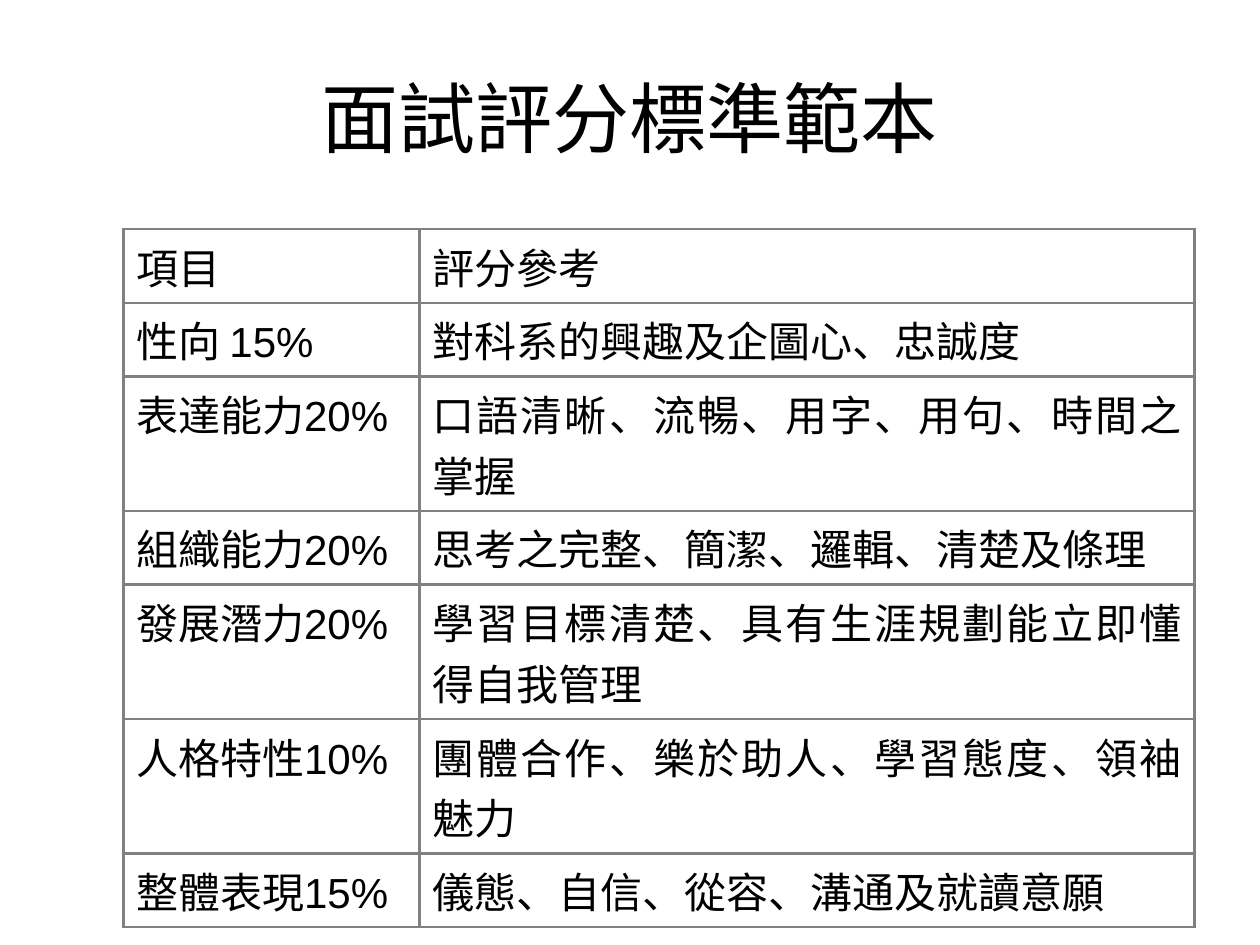
"""Build a slide with a table of interview scoring criteria."""
from lxml import etree
from pptx import Presentation
from pptx import util as u
from pptx.dml.color import RGBColor
from pptx.enum import text
from pptx.oxml import ns

BLACK = RGBColor(0x00, 0x00, 0x00)
GREY = RGBColor(0x80, 0x80, 0x80)
CRITERIA = [
    ("項目", "評分參考", 0.38),
    ("性向 15%", "對科系的興趣及企圖心、忠誠度", 0.55),
    ("表達能力20%", "口語清晰、流暢、用字、用句、時間之掌握", 0.68),
    ("組織能力20%", "思考之完整、簡潔、邏輯、清楚及條理", 0.55),
    ("發展潛力20%", "學習目標清楚、具有生涯規劃能立即懂得自我管理", 0.79),
    ("人格特性10%", "團體合作、樂於助人、學習態度、領袖魅力", 0.68),
    ("整體表現15%", "儀態、自信、從容、溝通及就讀意願", 0.55),
]
COLUMN_WIDTHS = (2.35, 6.15)


def add_span(para, words, size):
    span = para.add_run()
    span.text = words
    span.font.name = "Arial"
    span.font.size = u.Pt(size)
    span.font.color.rgb = BLACK


def add_borders(cell):
    properties = cell._tc.get_or_add_tcPr()
    for side in ("a:lnL", "a:lnR", "a:lnT", "a:lnB"):
        line = etree.SubElement(properties, ns.qn(side), w=str(u.Pt(1.5)))
        fill = etree.SubElement(line, ns.qn("a:solidFill"))
        etree.SubElement(fill, ns.qn("a:srgbClr"), val=str(GREY))


deck = Presentation()
deck.slide_width, deck.slide_height = u.Inches(10), u.Inches(7.5)
page = deck.slides.add_slide(deck.slide_layouts[5])

title = page.shapes.title
title.left, title.top = int(deck.slide_width * 0.05), int(deck.slide_height * 0.04)
title.width, title.height = int(deck.slide_width * 0.9), u.Inches(1.25)
title.text_frame.vertical_anchor = text.MSO_ANCHOR.MIDDLE
heading = title.text_frame.paragraphs[0]
heading.alignment = text.PP_ALIGN.CENTER
add_span(heading, "面試評分標準範本", 44)

frame = page.shapes.add_table(
    len(CRITERIA), len(COLUMN_WIDTHS), u.Inches(0.98), u.Inches(1.82),
    u.Inches(sum(COLUMN_WIDTHS)), u.Inches(sum(row[-1] for row in CRITERIA)))
table = frame.table
table.first_row = table.horz_banding = False
for column, width in zip(table.columns, COLUMN_WIDTHS):
    column.width = u.Inches(width)

for row, (item, reference, height) in zip(table.rows, CRITERIA):
    row.height = u.Inches(height)
    for cell, words in zip(row.cells, (item, reference)):
        add_borders(cell)
        cell.fill.background()
        para = cell.text_frame.paragraphs[0]
        para.alignment = text.PP_ALIGN.JUSTIFY
        before = etree.SubElement(para._p.get_or_add_pPr(), ns.qn("a:spcBef"))
        etree.SubElement(before, ns.qn("a:spcPct"), val="20000")
        add_span(para, words, 24)

deck.save("out.pptx")
